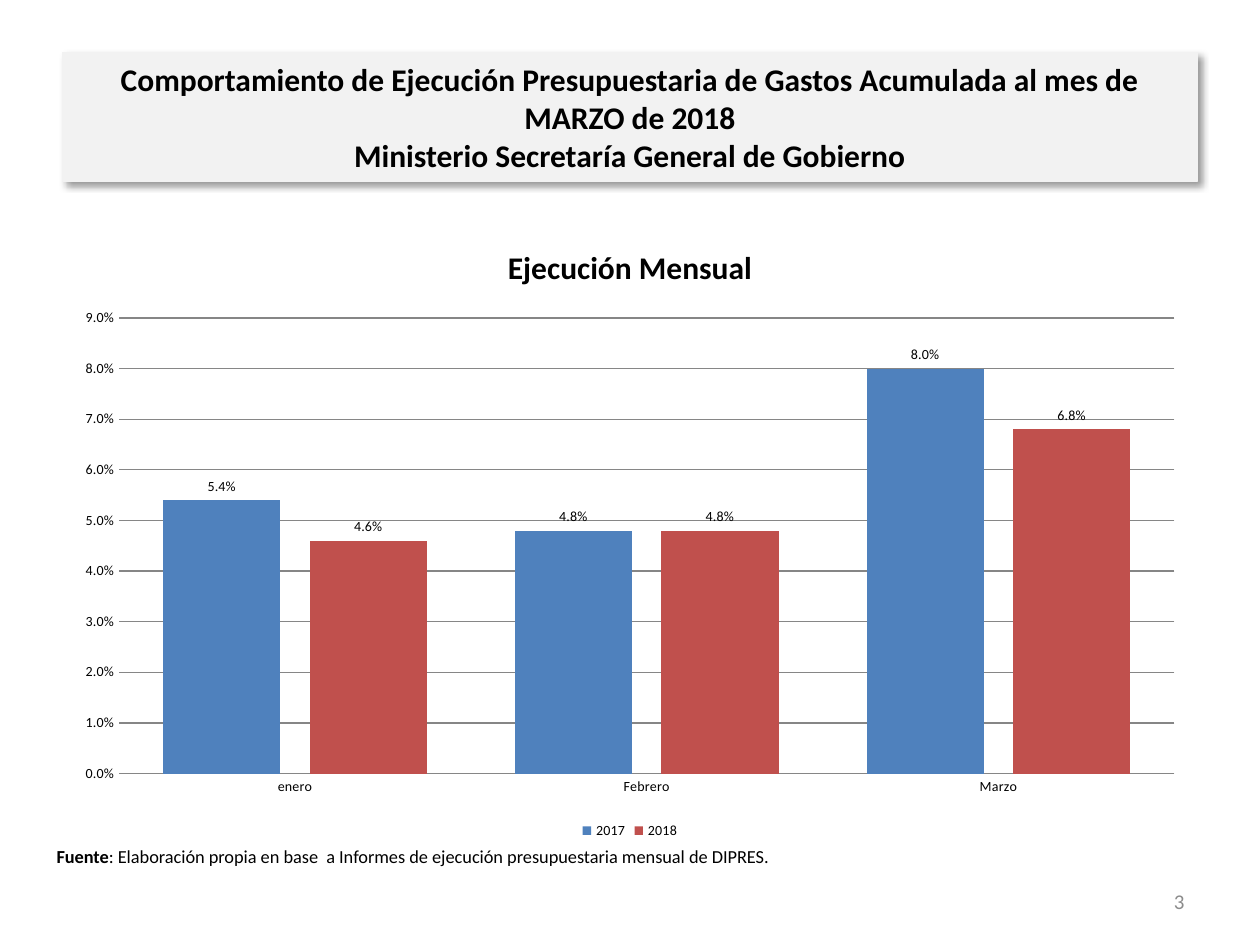
from lxml import etree
from pptx import Presentation
from pptx import util as u
from pptx.chart import data as chart_data
from pptx.dml import color
from pptx.enum import chart as charts, shapes, text
from pptx.oxml import ns


def rgb(value):
    return color.RGBColor.from_string(value)


def add_span(para, words, size, bold=False, tint="000000"):
    span = para.add_run()
    span.text = words
    span.font.name = "Calibri"
    span.font.size = u.Pt(size)
    span.font.bold = bold
    span.font.color.rgb = rgb(tint)


deck = Presentation()
deck.slide_width, deck.slide_height = u.Cm(25.4), u.Cm(19.05)
page = deck.slides.add_slide(deck.slide_layouts[6])

# Title band
band = page.shapes.add_shape(shapes.MSO_SHAPE.RECTANGLE,
                             u.Cm(1.27), u.Cm(1.06), u.Cm(22.86), u.Cm(2.6))
band.fill.solid()
band.fill.fore_color.rgb = rgb("F2F2F2")
band.line.color.rgb = rgb("F2F2F2")
band.line.width = u.Pt(0.75)
band.text_frame.word_wrap = True
band.text_frame.vertical_anchor = text.MSO_ANCHOR.MIDDLE
para = band.text_frame.paragraphs[0]
para.alignment = text.PP_ALIGN.CENTER
add_span(para, "Comportamiento de Ejecución Presupuestaria de Gastos Acumulada "
               "al mes de MARZO de 2018", 18, True)
para.add_line_break()
add_span(para, "Ministerio Secretaría General de Gobierno", 18, True)

# Soft shadow to the lower right of the band
band.shadow.inherit = False
effects = band.element.spPr.find(ns.qn("a:effectLst"))
shadow = etree.SubElement(effects, ns.qn("a:outerShdw"), blurRad=str(u.Pt(4)),
                          dist=str(u.Pt(3)), dir="2700000", algn="tl", rotWithShape="0")
shade = etree.SubElement(shadow, ns.qn("a:srgbClr"), val="000000")
etree.SubElement(shade, ns.qn("a:alpha"), val="40000")

# Monthly execution chart
data = chart_data.CategoryChartData(number_format="0.0%")
data.categories = ["enero", "Febrero", "Marzo"]
data.add_series("2017", (0.054, 0.048, 0.08))
data.add_series("2018", (0.046, 0.048, 0.068))
chart = page.shapes.add_chart(charts.XL_CHART_TYPE.COLUMN_CLUSTERED, u.Cm(1.27), u.Cm(4.45),
                              u.Cm(22.86), u.Cm(12.57), data).chart
chart.font.name = "Calibri"
chart.font.size = u.Pt(10)
chart.font.color.rgb = rgb("000000")

chart.has_title = True
add_span(chart.chart_title.text_frame.paragraphs[0], "Ejecución Mensual", 18, True)
chart.chart_title.include_in_layout = False
chart.has_legend = True
chart.legend.position = charts.XL_LEGEND_POSITION.BOTTOM
chart.legend.include_in_layout = False
chart.legend.font.size = u.Pt(8)

# Axes and gridlines
for axis in (chart.category_axis, chart.value_axis):
    axis.major_tick_mark = charts.XL_TICK_MARK.NONE
    axis.minor_tick_mark = charts.XL_TICK_MARK.NONE
    axis.tick_labels.font.size = u.Pt(8)
chart.category_axis.format.line.color.rgb = rgb("868686")
values = chart.value_axis
values.minimum_scale, values.maximum_scale, values.major_unit = 0, 0.09, 0.01
values.format.line.fill.background()
values.major_gridlines.format.line.color.rgb = rgb("868686")
values.tick_labels.number_format = "0.0%"
values.tick_labels.number_format_is_linked = False

# Columns and their labels
plot = chart.plots[0]
plot.gap_width, plot.overlap = 75, -25
plot.vary_by_categories = False
for series, tint in zip(plot.series, ("4F81BD", "C0504D")):
    series.format.fill.solid()
    series.format.fill.fore_color.rgb = rgb(tint)
    labels = series.data_labels
    labels.show_value = True
    labels.number_format = "0.0%"
    labels.number_format_is_linked = False
    labels.position = charts.XL_LABEL_POSITION.OUTSIDE_END
    labels.font.size = u.Pt(8)

# Source note
box = page.shapes.add_textbox(u.Cm(0.89), u.Cm(16.92), u.Cm(23.34), u.Cm(1.02))
box.text_frame.word_wrap = True
para = box.text_frame.paragraphs[0]
add_span(para, "Fuente", 10.5, True)
add_span(para, ": Elaboración propia en base  a Informes de ejecución "
               "presupuestaria mensual de DIPRES.", 10.5)

# Page number
box = page.shapes.add_textbox(u.Cm(18.21), u.Cm(17.65), u.Cm(5.92), u.Cm(1.02))
box.text_frame.word_wrap = True
box.text_frame.vertical_anchor = text.MSO_ANCHOR.MIDDLE
para = box.text_frame.paragraphs[0]
para.alignment = text.PP_ALIGN.RIGHT
add_span(para, "3", 12, tint="8C8C8C")

deck.save("out.pptx")
